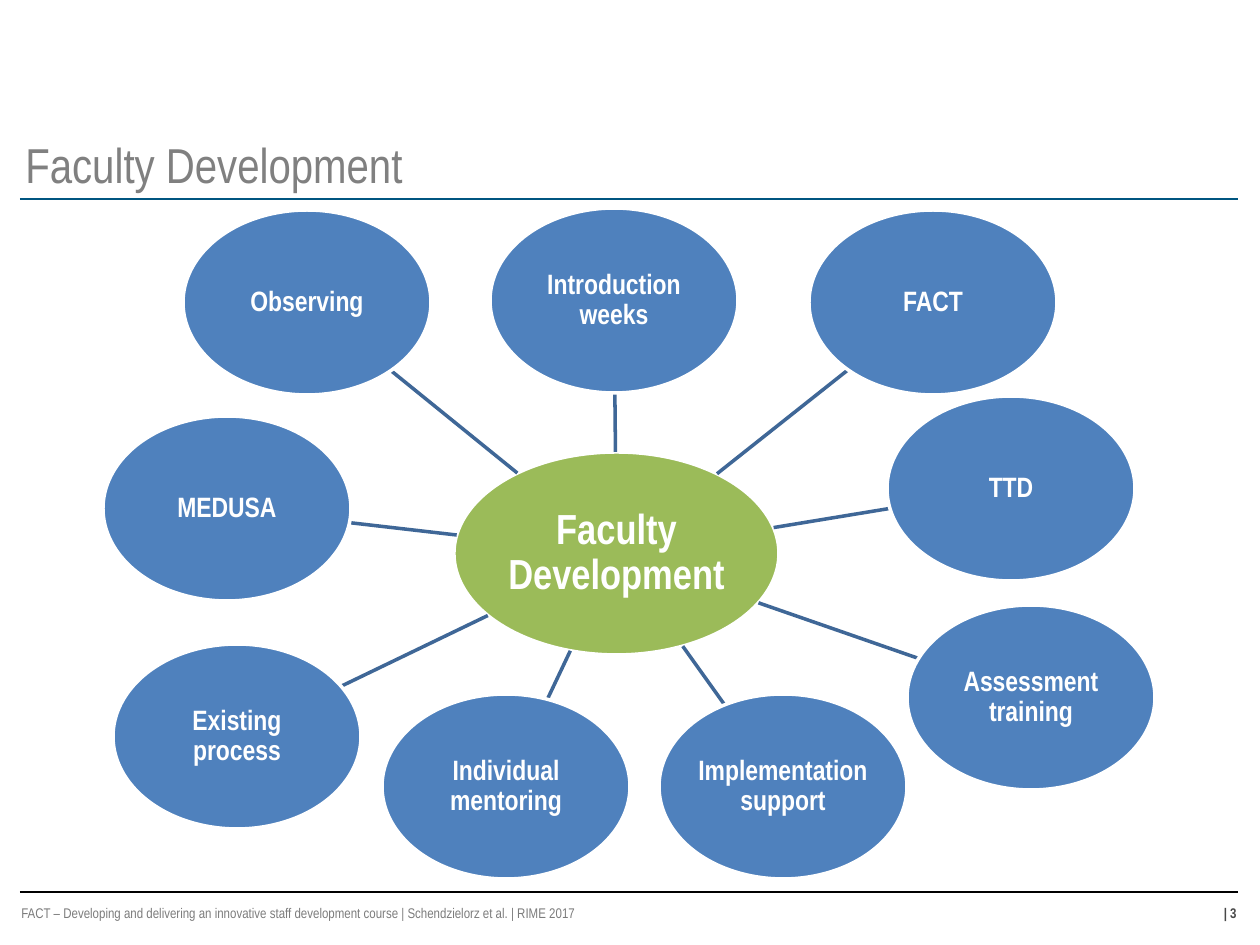
from collections import namedtuple
from math import hypot

from lxml.etree import SubElement
from pptx import Presentation
from pptx.dml.color import RGBColor
from pptx.enum.shapes import MSO_CONNECTOR, MSO_SHAPE
from pptx.enum.text import MSO_ANCHOR, PP_ALIGN
from pptx.oxml.ns import qn
from pptx.util import Inches, Pt

PX = Inches(1) / 126
FONT = "Arial Narrow"
COLORS = {
    "white": "FFFFFF",
    "title": "808080",
    "title_rule": "005580",
    "footer_rule": "000000",
    "footer": "7C7C7C",
    "page": "484848",
    "hub": "9BBB59",
    "topic": "4F81BD",
    "spoke": "3F6797",
}
Box = namedtuple("Box", "left top width height")

HUB_SIZE = (325, 203)
TOPIC_SIZE = (248, 185)
HUB_OFFSET = (351, 244)
TOPICS = [
    ("Introduction weeks", 387, 0),
    ("FACT", 706, 2),
    ("TTD", 784, 188),
    ("Assessment training", 804, 397),
    ("Implementation support", 556, 486),
    ("Individual mentoring", 279, 486),
    ("Existing process", 10, 436),
    ("MEDUSA", 0, 208),
    ("Observing", 80, 2),
]


def emu(px):
    return round(px * PX)


def rgb(name):
    return RGBColor.from_string(COLORS[name])


def write(shape, text, *, size, color, bold=False, align=PP_ALIGN.LEFT,
          anchor=MSO_ANCHOR.TOP, line_spacing=1.0, inset=None):
    frame = shape.text_frame
    frame.word_wrap = True
    frame.vertical_anchor = anchor
    if inset is not None:
        frame.margin_left = frame.margin_right = emu(inset)
        frame.margin_top = frame.margin_bottom = emu(inset)
    paragraph = frame.paragraphs[0]
    paragraph.alignment = align
    paragraph.line_spacing = line_spacing
    run = paragraph.add_run()
    run.text = text
    run.font.name = FONT
    run.font.size = Pt(size)
    run.font.bold = bold
    run.font.color.rgb = rgb(color)


def add_label(slide, box, text, **text_format):
    label = slide.shapes.add_textbox(*map(emu, box))
    write(label, text, **text_format)


def add_line(slide, start, end, color, width):
    line = slide.shapes.add_connector(
        MSO_CONNECTOR.STRAIGHT, *map(emu, (*start, *end)))
    line.line.color.rgb = rgb(color)
    line.line.width = Pt(width)
    SubElement(line._element.spPr, qn("a:effectLst"))


def add_bubble(slide, box, text, fill, size, inset):
    bubble = slide.shapes.add_shape(MSO_SHAPE.OVAL, *map(emu, box))
    bubble.shadow.inherit = False
    bubble.fill.solid()
    bubble.fill.fore_color.rgb = rgb(fill)
    bubble.line.color.rgb = rgb("white")
    bubble.line.width = Pt(2)
    write(bubble, text, size=size, color="white", bold=True, inset=inset,
          align=PP_ALIGN.CENTER, anchor=MSO_ANCHOR.MIDDLE, line_spacing=0.9)


def center(box):
    return box.left + box.width / 2, box.top + box.height / 2


def edge_toward(box, target):
    """Return the point where the ellipse in box meets the ray to target."""
    x, y = center(box)
    dx, dy = target[0] - x, target[1] - y
    reach = 1 / hypot(dx / (box.width / 2), dy / (box.height / 2))
    return x + dx * reach, y + dy * reach


def add_header(slide, box):
    add_label(slide, Box(box.left - 7, box.top, 1011, box.height),
              "Faculty Development", size=28, color="title",
              anchor=MSO_ANCHOR.BOTTOM)
    rule_y = box.top + box.height - 1
    add_line(slide, (box.left, rule_y), (box.left + box.width, rule_y),
             "title_rule", 1.5)


def add_mind_map(slide, box):
    def place(x, y, size):
        return Box(box.left + x, box.top + y, *size)

    hub = place(*HUB_OFFSET, HUB_SIZE)
    add_bubble(slide, hub, "Faculty Development", "hub", size=24, inset=2)
    for text, x, y in TOPICS:
        topic = place(x, y, TOPIC_SIZE)
        add_line(slide, edge_toward(hub, center(topic)),
                 edge_toward(topic, center(hub)), "spoke", 2)
        add_bubble(slide, topic, text, "topic", size=16, inset=1)


def add_footer(slide, box):
    right = box.left + box.width
    add_line(slide, (box.left, box.top), (right, box.top), "footer_rule", 1.5)
    text_top = box.top + 6
    add_label(slide, Box(box.left - 11, text_top, 1186, 30),
              "FACT – Developing and delivering an innovative staff development "
              "course | Schendzielorz et al. | RIME 2017",
              size=8, color="footer")
    add_label(slide, Box(right - 251, text_top, 262, 32), "| 3",
              size=8, color="page", bold=True, align=PP_ALIGN.RIGHT)


def main():
    deck = Presentation()
    deck.slide_width, deck.slide_height = Inches(10), Inches(7.5)
    slide = deck.slides.add_slide(deck.slide_layouts[6])
    add_footer(slide, Box(20, 892, 1218, 38))
    add_header(slide, Box(20, 21, 1218, 179))
    add_mind_map(slide, Box(103, 208, 1052, 671))
    deck.save("out.pptx")


if __name__ == "__main__":
    main()
